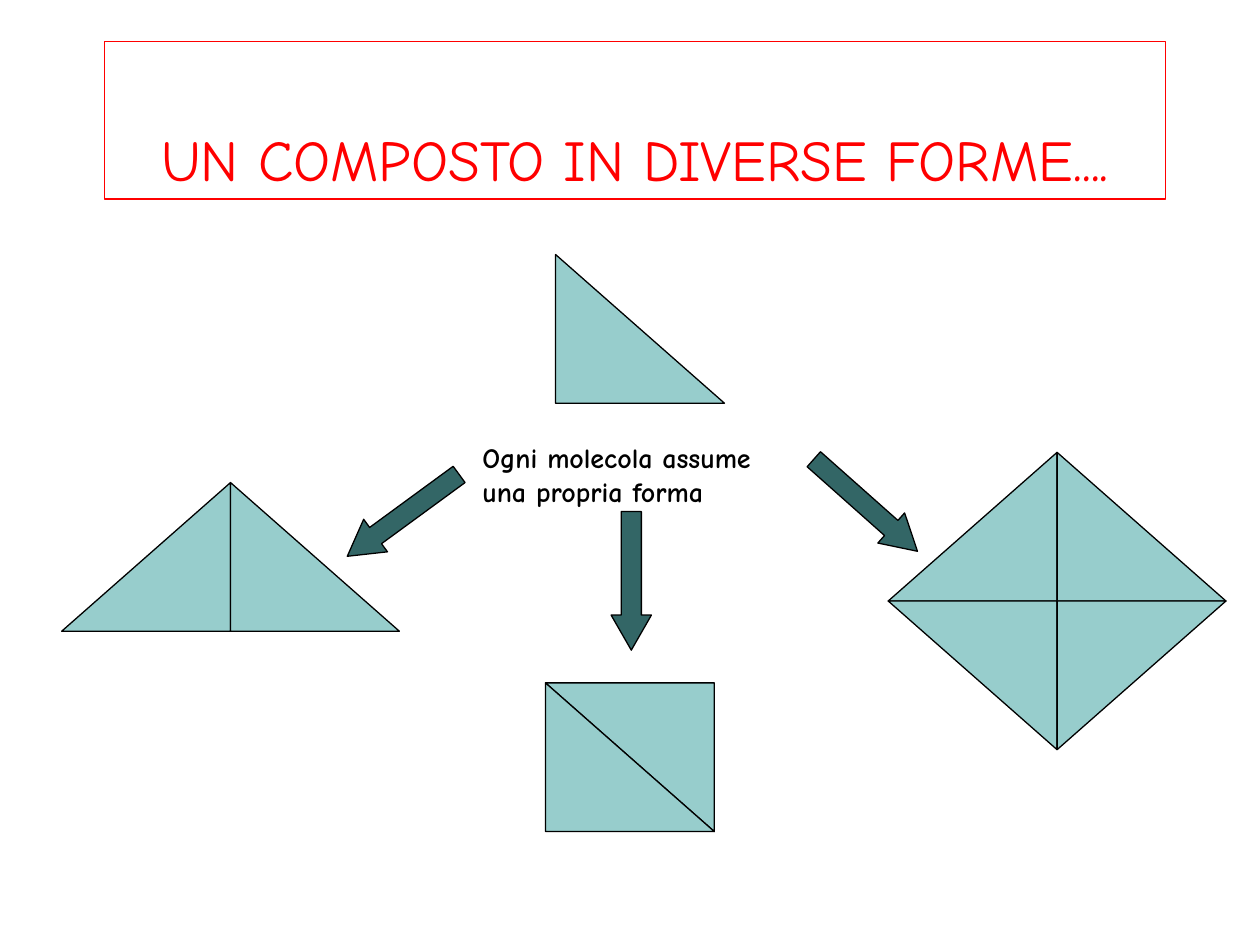
import pptx
import pptx.dml.color
import pptx.enum.shapes
import pptx.enum.text
import pptx.util

FONT = "Comic Neue"
RED, BLACK, AQUA, TEAL = "FF0000", "000000", "97CDCC", "336666"
TRI_W, TRI_H = 1.34, 1.18      # one molecule
ARROW_W, ARROW_H = 0.32, 1.1
SHAPES = pptx.enum.shapes.MSO_SHAPE
ANCHOR = pptx.enum.text.MSO_ANCHOR
ALIGN = pptx.enum.text.PP_ALIGN


def rgb(color):
    return pptx.dml.color.RGBColor.from_string(color)


def place(sp, *box):
    sp.left, sp.top, sp.width, sp.height = map(pptx.util.Inches, box)


def outline(sp, color):
    sp.line.color.rgb = rgb(color)
    sp.line.width = pptx.util.Pt(0.75)


def write(sp, text, size, color, bold, align, anchor):
    tf = sp.text_frame
    tf.text = text
    tf.word_wrap = True
    tf.auto_size = pptx.enum.text.MSO_AUTO_SIZE.NONE
    tf.vertical_anchor = anchor
    p = tf.paragraphs[0]
    p.alignment = align
    font = p.runs[0].font
    font.name, font.size, font.bold = FONT, pptx.util.Pt(size), bold
    font.color.rgb = rgb(color)


def add_filled(s, kind, box, fill):
    sp = s.shapes.add_shape(kind, *map(pptx.util.Inches, box))
    sp.shadow.inherit = False
    sp.fill.solid()
    sp.fill.fore_color.rgb = rgb(fill)
    outline(sp, BLACK)
    return sp


def add_molecule(s, x, y, col=0, row=0, flip=""):
    """Right triangle in a cell of the grid that starts at x, y."""
    box = (x + col * TRI_W, y + row * TRI_H, TRI_W, TRI_H)
    sp = add_filled(s, SHAPES.RIGHT_TRIANGLE, box, AQUA)
    for axis in flip:
        sp._element.spPr.xfrm.set("flip" + axis, "1")


def add_arrow(s, x, y, rotation):
    sp = add_filled(s, SHAPES.UP_ARROW, (x, y, ARROW_W, ARROW_H), TEAL)
    sp.adjustments[0], sp.adjustments[1] = 0.5, 0.87
    sp.rotation = rotation


def main():
    prs = pptx.Presentation()
    prs.slide_width, prs.slide_height = pptx.util.Inches(10), pptx.util.Inches(7.5)
    s = prs.slides.add_slide(prs.slide_layouts[5])

    # Title
    title = s.shapes.title
    place(title, 0.83, 0.33, 8.42, 1.25)
    outline(title, RED)
    write(title, "UN COMPOSTO IN DIVERSE FORME....", 33, RED, False,
          ALIGN.CENTER, ANCHOR.BOTTOM)

    # Single molecule
    add_molecule(s, 4.41, 2.02)

    # Square: two molecules in the same cell
    for flip in ("HV", ""):
        add_molecule(s, 4.33, 5.42, flip=flip)

    # Wide triangle: two molecules side by side
    for col, flip in enumerate(("H", "")):
        add_molecule(s, 0.49, 3.83, col, flip=flip)

    # Rhombus: four molecules, two by two
    for row, flips in enumerate((("H", ""), ("HV", "V"))):
        for col, flip in enumerate(flips):
            add_molecule(s, 7.05, 3.59, col, row, flip)

    # Caption
    caption = s.shapes.add_textbox(0, 0, 0, 0)
    place(caption, 3.73, 3.45, 2.6, 0.64)
    write(caption, "Ogni molecola assume una propria forma", 16, BLACK, True,
          ALIGN.LEFT, ANCHOR.TOP)

    # Arrows to the three forms
    for x, y, rotation in ((3.04, 3.54, 233.8), (4.85, 4.06, 180), (6.71, 3.46, 131.6)):
        add_arrow(s, x, y, rotation)

    prs.save("out.pptx")


if __name__ == "__main__":
    main()
